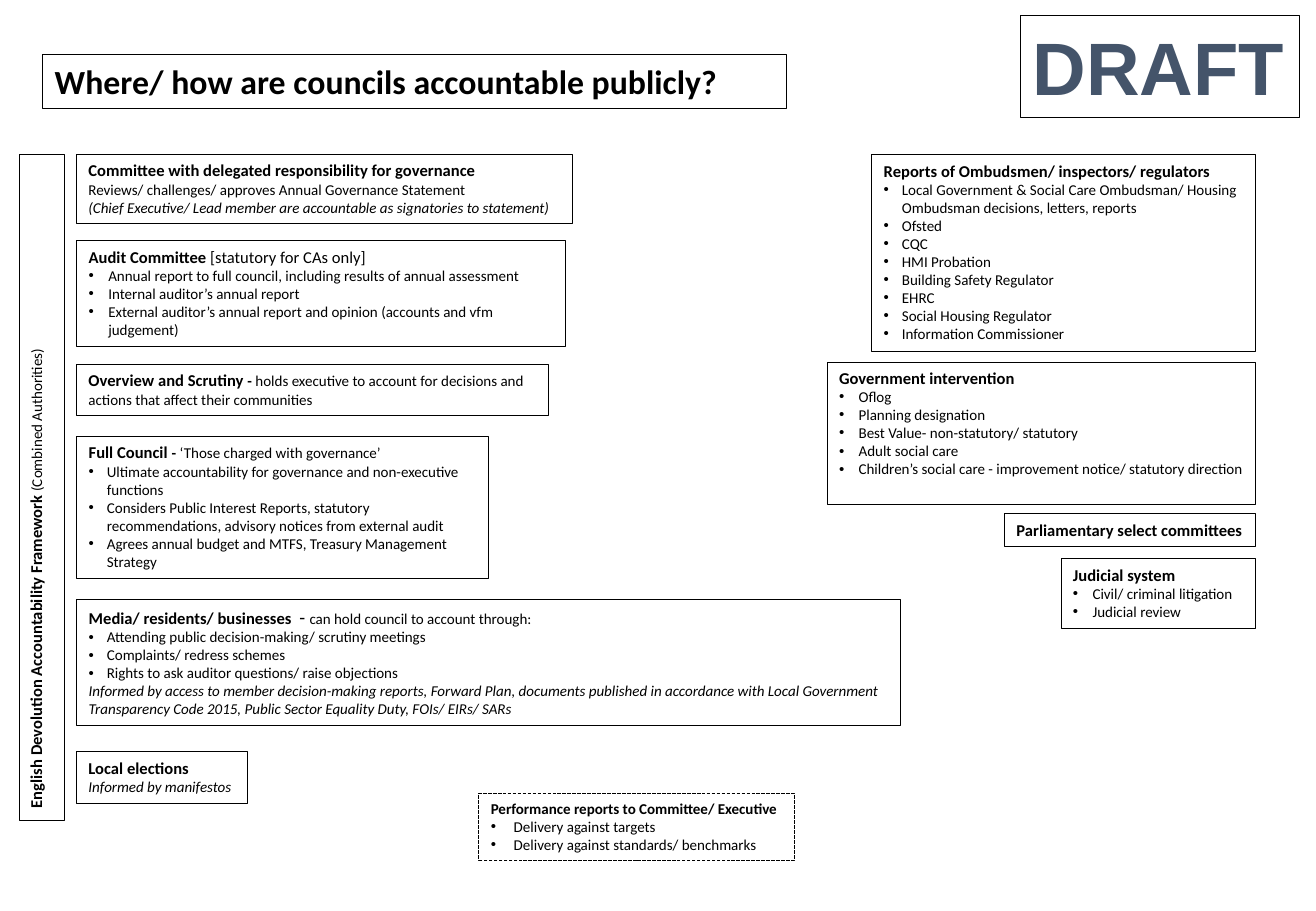
from lxml import etree
from pptx import Presentation
from pptx import util as u
from pptx.dml.color import RGBColor
from pptx.enum import dml, text
from pptx.oxml import ns

BLACK = RGBColor(0x00, 0x00, 0x00)
SLATE = RGBColor(0x44, 0x54, 0x6A)

HEAD, BODY = 9.8, 8.9  # text sizes in points
LEFT, RIGHT, TOP = 1.6, 26.25, 3.23  # column edges in cm


def span(words, size=BODY, bold=False, italic=False, font="Calibri", colour=BLACK):
    """Describe one run of text."""
    return words, size, bold, italic, font, colour


def heading(words, size=HEAD):
    return span(words, size, bold=True)


def line(*spans):
    """Describe a plain paragraph."""
    return 0, spans


def bullets(indent, *items):
    """Describe bulleted paragraphs with a hanging indent in cm."""
    return [(indent, [span(item)]) for item in items]


def add_span(para, words, size, bold, italic, font, colour):
    run = para.add_run()
    run.text = words
    run.font.size = u.Pt(size)
    run.font.bold = bold
    run.font.italic = italic
    run.font.name = font
    run.font.color.rgb = colour


def set_bullet(para, indent):
    """Give a paragraph its indent and bullet, or neither."""
    properties = para._p.get_or_add_pPr()
    properties.set("marL", str(u.Cm(indent)))
    properties.set("indent", str(-u.Cm(indent)))
    if indent:
        etree.SubElement(properties, ns.qn("a:buFont"), typeface="Arial")
        etree.SubElement(properties, ns.qn("a:buChar"), char="•")
    else:
        etree.SubElement(properties, ns.qn("a:buNone"))


def fill_box(box, left, top, width, height, paragraphs, wrap=True, border=0.25):
    """Place a text box or placeholder, outline it and write its text."""
    box.left, box.top = u.Cm(left), u.Cm(top)
    box.width, box.height = u.Cm(width), u.Cm(height)
    box.line.color.rgb = BLACK
    box.line.width = u.Pt(border)
    frame = box.text_frame
    frame.auto_size = text.MSO_AUTO_SIZE.NONE
    frame.word_wrap = wrap
    frame.vertical_anchor = text.MSO_ANCHOR.TOP
    for number, (indent, spans) in enumerate(paragraphs):
        para = frame.add_paragraph() if number else frame.paragraphs[0]
        para.alignment = text.PP_ALIGN.LEFT
        para.line_spacing = 1.0
        para.space_before = para.space_after = u.Pt(0)
        set_bullet(para, indent)
        for parts in spans:
            add_span(para, *parts)
    return box


def add_box(page, *place_and_text, **options):
    box = page.shapes.add_textbox(0, 0, 0, 0)
    return fill_box(box, *place_and_text, **options)


def add_council_boxes(page):
    """Left column: accountability within and around the council."""
    add_box(page, LEFT, TOP, 10.36, 1.45, [
        line(heading("Committee with delegated responsibility for governance")),
        line(span("Reviews/ challenges/ approves Annual Governance Statement")),
        line(span("(Chief Executive/ Lead member are accountable as "
                  "signatories to statement)", italic=True)),
    ], wrap=False)
    fill_box(page.placeholders[1], LEFT, 5.03, 10.21, 2.21, [
        line(heading("Audit Committee "), span("[statutory for CAs only]", HEAD)),
        *bullets(0.41,
                 "Annual report to full council, including results of annual assessment",
                 "Internal auditor’s annual report",
                 "External auditor’s annual report and opinion (accounts and vfm judgement)"),
    ])
    add_box(page, LEFT, 7.62, 9.86, 1.07, [
        line(heading("Overview and Scrutiny "), heading("- ", BODY),
             span("holds executive to account for decisions and actions "
                  "that affect their communities")),
    ])
    fill_box(page.placeholders[2], LEFT, 9.12, 8.61, 2.97, [
        line(heading("Full Council "), heading("- ", BODY),
             span("‘Those charged with governance’")),
        *bullets(0.38,
                 "Ultimate accountability for governance and non-executive functions",
                 "Considers Public Interest Reports, statutory recommendations, "
                 "advisory notices from external audit",
                 "Agrees annual budget and MTFS, Treasury Management Strategy"),
    ])
    fill_box(page.placeholders[3], LEFT, 12.52, 17.22, 2.64, [
        line(heading("Media/ residents/ businesses  "), span("- ", 11.4),
             span("can hold council to account through:")),
        *bullets(0.38,
                 "Attending public decision-making/ scrutiny meetings",
                 "Complaints/ redress schemes",
                 "Rights to ask auditor questions/ raise objections"),
        line(span("Informed by access to member decision-making reports, Forward Plan, "
                  "documents published in accordance with Local Government Transparency "
                  "Code 2015, Public Sector Equality Duty, FOIs/ EIRs/ SARs", italic=True)),
    ])
    add_box(page, LEFT, 15.72, 3.58, 1.07, [
        line(heading("Local elections")),
        line(span("Informed by manifestos", italic=True)),
    ], wrap=False)


def add_external_boxes(page):
    """Right column: outside bodies, aligned on the right edge."""
    fill_box(page.placeholders[4], RIGHT - 8.03, TOP, 8.03, 4.11, [
        line(heading("Reports of Ombudsmen/ inspectors/ regulators")),
        *bullets(0.38,
                 "Local Government & Social Care Ombudsman/ Housing Ombudsman "
                 "decisions, letters, reports",
                 "Ofsted", "CQC", "HMI Probation", "Building Safety Regulator",
                 "EHRC", "Social Housing Regulator", "Information Commissioner"),
    ])
    add_box(page, RIGHT - 8.96, 7.57, 8.96, 2.97, [
        line(heading("Government intervention")),
        *bullets(0.41,
                 "Oflog", "Planning designation",
                 "Best Value- non-statutory/ statutory", "Adult social care",
                 "Children’s social care - improvement notice/ statutory direction"),
    ])
    add_box(page, RIGHT - 5.25, 10.74, 5.25, 0.69, [
        line(heading("Parliamentary select committees")),
    ], wrap=False)
    add_box(page, RIGHT - 4.07, 11.68, 4.07, 1.45, [
        line(heading("Judicial system")),
        *bullets(0.41, "Civil/ criminal litigation", "Judicial review"),
    ])


def main():
    deck = Presentation()
    deck.slide_width, deck.slide_height = u.Cm(27.51), u.Cm(19.05)
    page = deck.slides.add_slide(deck.slide_layouts.get_by_name("Comparison"))

    # Title and draft mark
    fill_box(page.shapes.title, 0.89, 1.14, 15.54, 1.12, [
        line(heading("Where/ how are councils accountable publicly?", 20)),
    ])
    add_box(page, 21.34, 0.33, 5.82, 2.13, [
        line(span("DRAFT", 44, bold=True, font="Arial", colour=SLATE)),
    ], wrap=False, border=0.75)

    # Vertical framework band
    band = add_box(page, 0.41, TOP, 0.94, 13.92, [
        line(heading("English Devolution Accountability Framework "),
             span("(Combined Authorities)")),
    ])
    band.text_frame._txBody.bodyPr.set("vert", "vert270")

    add_council_boxes(page)
    add_external_boxes(page)

    # Dashed performance box
    performance = add_box(page, 10.01, 16.59, 6.6, 1.4, [
        line(heading("Performance reports to Committee/ Executive", BODY)),
        *bullets(0.48, "Delivery against targets",
                 "Delivery against standards/ benchmarks"),
    ], wrap=False, border=0.75)
    performance.line.dash_style = dml.MSO_LINE.SQUARE_DOT

    deck.save("out.pptx")


if __name__ == "__main__":
    main()
